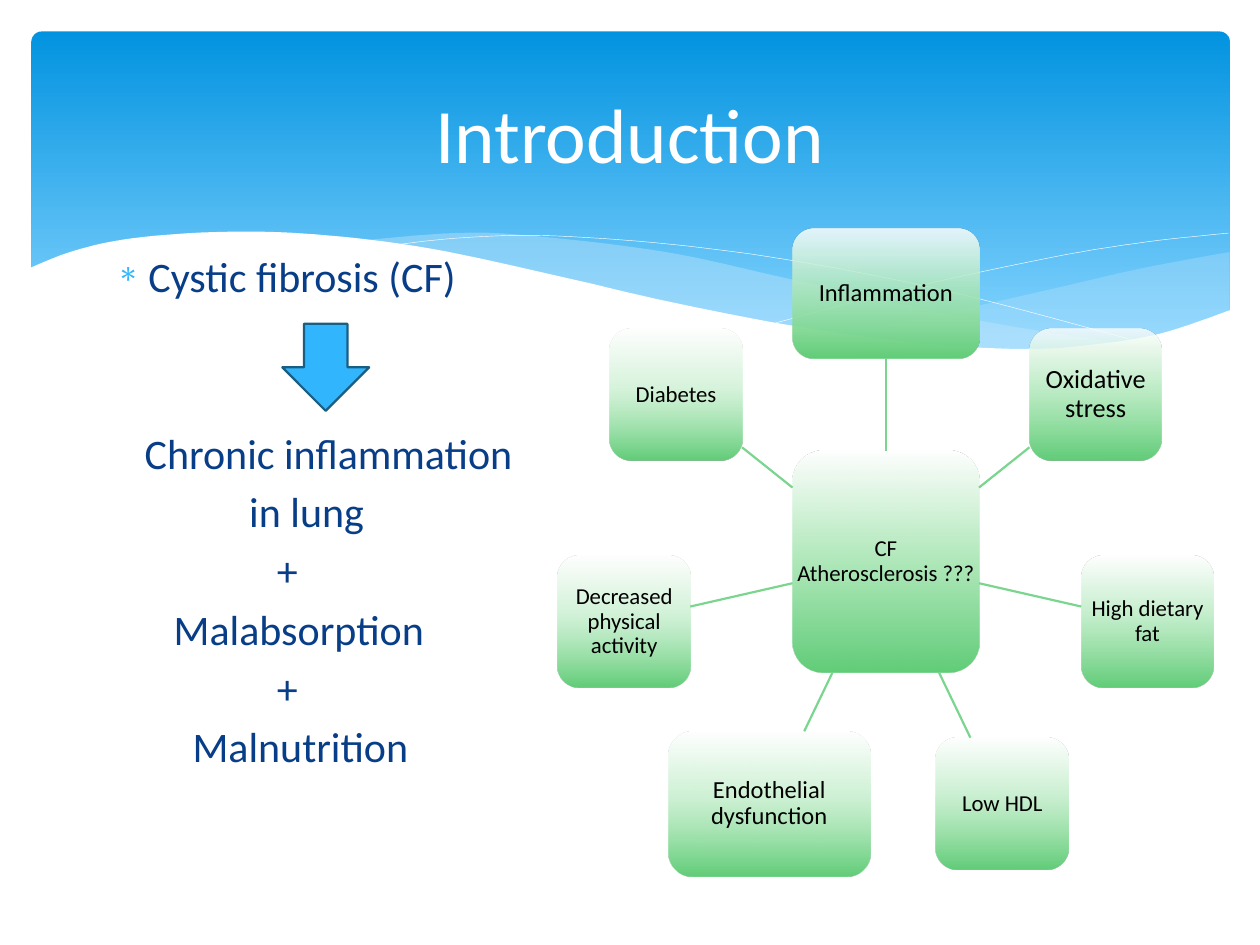
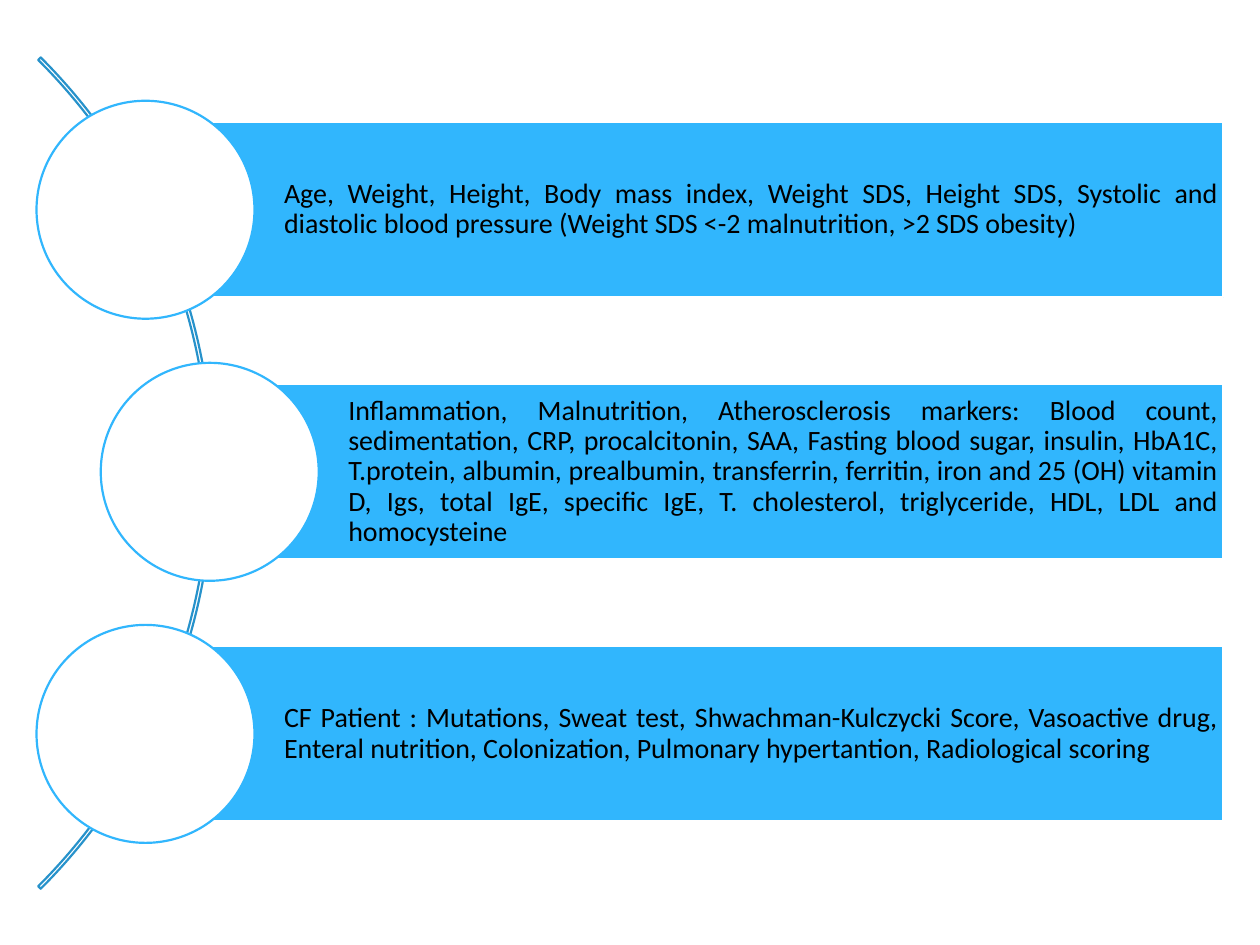
from dataclasses import dataclass
from math import cos, radians, sin

from lxml import etree
from pptx import Presentation
from pptx.dml.color import RGBColor
from pptx.enum.shapes import MSO_CONNECTOR, MSO_SHAPE
from pptx.enum.text import MSO_ANCHOR, PP_ALIGN
from pptx.oxml.ns import qn
from pptx.util import Inches, Pt

ROUNDED, RECTANGLE, OVAL = MSO_SHAPE.ROUNDED_RECTANGLE, MSO_SHAPE.RECTANGLE, MSO_SHAPE.OVAL
DOWN_ARROW, BLOCK_ARC = MSO_SHAPE.DOWN_ARROW, MSO_SHAPE.BLOCK_ARC
STRAIGHT = MSO_CONNECTOR.STRAIGHT
TOP, MIDDLE = MSO_ANCHOR.TOP, MSO_ANCHOR.MIDDLE
LEFT, CENTER, JUSTIFY = PP_ALIGN.LEFT, PP_ALIGN.CENTER, PP_ALIGN.JUSTIFY


@dataclass(frozen=True)
class Theme:
    font: str = "Calibri"
    white: str = "FFFFFF"
    black: str = "000000"
    navy: str = "073E87"
    sky: str = "31B6FD"
    arrow_edge: str = "195F84"
    arc: str = "2792CB"
    mist: str = "C6E7FC"
    band_top: str = "0293E0"
    band_bottom: str = "83D3FE"
    mint: str = "B1E9BB"
    green: str = "61CD78"
    spoke: str = "7AD58E"
    title_size: int = 44
    body_size: int = 24
    bar_size: int = 16
    line_width: float = 1.25
    hairline: float = 0.25
    box_margins: tuple = (0.1, 0.05, 0.1, 0.05)


theme = Theme()


def paint(shape, stops=(), edge=None, width=theme.line_width):
    shape.shadow.inherit = False
    if len(stops) > 1:
        shape.fill.gradient()
        shape.fill.gradient_angle = 270
        stop_list = shape._element.spPr.find(".//" + qn("a:gsLst"))
        stop_list.clear()
        for position, color, opacity in stops:
            stop = etree.SubElement(stop_list, qn("a:gs"), pos=str(position * 1000))
            tint = etree.SubElement(stop, qn("a:srgbClr"), val=color)
            etree.SubElement(tint, qn("a:alpha"), val=str(opacity * 1000))
    elif stops:
        _, color, opacity = stops[0]
        shape.fill.solid()
        shape.fill.fore_color.rgb = RGBColor.from_string(color)
        tint = shape._element.spPr.find(".//" + qn("a:srgbClr"))
        etree.SubElement(tint, qn("a:alpha"), val=str(opacity * 1000))
    else:
        shape.fill.background()
    if edge:
        shape.line.color.rgb = RGBColor.from_string(edge)
        shape.line.width = Pt(width)
    else:
        shape.line.fill.background()


def write(shape, lines, size, color, align, anchor=MIDDLE, spacing=1.0, margins=(0, 0, 0, 0), wrap=True):
    frame = shape.text_frame
    left, top, right, bottom = (Inches(margin) for margin in margins)
    frame_format = {
        "margin_left": left, "margin_top": top, "margin_right": right, "margin_bottom": bottom,
        "word_wrap": wrap, "vertical_anchor": anchor,
    }
    for name, value in frame_format.items():
        setattr(frame, name, value)
    frame.text = "\n".join(lines)
    font_format = {"name": theme.font, "size": Pt(size)}
    for paragraph in frame.paragraphs:
        paragraph.alignment = align
        paragraph.line_spacing = spacing
        for run in paragraph.runs:
            for name, value in font_format.items():
                setattr(run.font, name, value)
            run.font.color.rgb = RGBColor.from_string(color)
    return frame.paragraphs


deck = Presentation()
deck.slide_width, deck.slide_height = Inches(10), Inches(7.5)
blank = deck.slide_layouts[6]

intro = deck.slides.add_slide(blank).shapes

band = intro.add_shape(ROUNDED, Inches(0.25), Inches(0.25), Inches(9.51), Inches(2.7))
band.adjustments[0] = 0.03
paint(band, [(0, theme.band_top, 100), (90, theme.band_bottom, 100)])

right_top = [(9.76, 2), (9.06, 2.13), (8.32, 2.3), (7.29, 2.53), (6.61, 2.65)]
right_bottom = [(6.61, 2.65), (7.32, 2.74), (8.03, 2.78), (8.72, 2.74), (9.35, 2.62), (9.76, 2.47)]
long_top = [(8.93, 2.73), (7.75, 2.54), (6.29, 2.22), (5.28, 2), (4.2, 1.87), (3.61, 1.85), (2.86, 1.91)]
long_bottom = [(2.86, 1.91), (3.83, 2.07), (4.91, 2.32), (6.01, 2.55), (7.09, 2.72), (7.96, 2.78), (8.93, 2.73)]
falling_crest = [(3.09, 1.95), (3.63, 1.89), (4.33, 1.87), (5.33, 1.94), (6.36, 2.08), (7.6, 2.33), (9.07, 2.72)]
rising_crest = [(6.13, 2.57), (7.2, 2.29), (8.36, 2.04), (9.1, 1.92), (9.75, 1.85)]
foot_top = [
    (9.77, 2.46), (9.2, 2.65), (8.63, 2.74), (8.09, 2.77), (7.26, 2.72), (6.26, 2.58), (5.29, 2.39),
    (4.47, 2.2), (3.4, 1.97), (2.5, 1.86), (1.77, 1.84), (1.06, 1.89), (0.59, 1.99), (0.23, 2.13),
]
foot_bottom = [(0.23, 3.29), (9.77, 3.29)]
waves = [
    ([right_top, right_bottom], [(0, theme.mist, 29)], None),
    ([long_top, long_bottom], [(0, theme.mist, 40)], None),
    ([falling_crest], [], theme.white),
    ([rising_crest], [], theme.white),
    ([foot_top, foot_bottom], [(0, theme.white, 100)], None),
]
units_per_inch, curve_steps = 1000, 8
for curves, stops, edge in waves:
    points = []
    for knots in curves:
        padded = [knots[0], *knots, knots[-1]]
        for before, start, end, after in zip(padded, padded[1:], padded[2:], padded[3:]):
            for step in range(curve_steps):
                t = step / curve_steps
                points.append([
                    units_per_inch * (b + t * (c - a) / 2 + t**2 * (2 * a - 5 * b + 4 * c - d) / 2
                                      + t**3 * (3 * b - a - 3 * c + d) / 2)
                    for a, b, c, d in zip(before, start, end, after)
                ])
        points.append([units_per_inch * value for value in knots[-1]])
    outline = intro.build_freeform(*points[0], scale=Inches(1) / units_per_inch)
    outline.add_line_segments(points[1:], close=bool(stops))
    paint(outline.convert_to_shape(), stops, edge, theme.hairline)

causes = [
    ("Cystic fibrosis (CF)", 0.33),
    ("Chronic inflammation", 0.3),
    ("in lung", 1.13),
    ("+", 1.35),
    ("Malabsorption", 0.53),
    ("+", 1.35),
    ("Malnutrition", 0.68),
]
body = intro.add_textbox(Inches(0.75), Inches(1.94), Inches(3.54), Inches(4.76))
cause_lines = write(body, [cause for cause, _ in causes], theme.body_size, theme.navy, LEFT,
                    anchor=TOP, margins=theme.box_margins)
for line, (_, indent) in zip(cause_lines, causes):
    line.space_before = Pt(4.8)
    line._p.get_or_add_pPr().set("marL", str(Inches(indent)))
disease_line, inflammation_line = cause_lines[:2]
inflammation_line.space_before = Pt(72)
bullet_format = disease_line._p.get_or_add_pPr()
bullet_format.set("indent", str(Inches(-0.25)))
bullet_color = etree.SubElement(bullet_format, qn("a:buClr"))
etree.SubElement(bullet_color, qn("a:srgbClr"), val=theme.sky)
etree.SubElement(bullet_format, qn("a:buSzPct"), val="75000")
etree.SubElement(bullet_format, qn("a:buChar"), char="∗")

title = intro.add_textbox(Inches(0.5), Inches(0.37), Inches(9), Inches(1.37))
write(title, ["Introduction"], theme.title_size, theme.white, CENTER, margins=theme.box_margins)

hub_x, hub_y, hub_width, hub_height = 7.03, 4.46, 1.48, 1.76
ring_radius = 2.13
outcome = ("CF\vAtherosclerosis ???", hub_width, hub_height, 13)
risk_factors = [
    ("Inflammation", 1.48, 1.03, 14),
    ("Oxidative stress", 1.05, 1.05, 15),
    ("High dietary fat", 1.05, 1.05, 13),
    ("Low HDL", 1.05, 1.05, 13),
    ("Endothelial dysfunction", 1.6, 1.15, 14),
    ("Decreased physical activity", 1.05, 1.05, 13),
    ("Diabetes", 1.05, 1.05, 13),
]
directions = [(0, 0)]
for position in range(len(risk_factors)):
    angle = radians(position * 360 / len(risk_factors))
    directions.append((sin(angle), -cos(angle)))

nodes = []
for index, (label, width, height, size) in enumerate([outcome, *risk_factors]):
    across, down = directions[index]
    left = hub_x + ring_radius * across - width / 2
    top = hub_y + ring_radius * down - height / 2
    node = intro.add_shape(ROUNDED, Inches(left), Inches(top), Inches(width), Inches(height))
    opacity = round(90 - index * 40 / len(risk_factors))
    paint(node, [(0, theme.white, opacity), (44, theme.mint, opacity), (100, theme.green, 100)])
    write(node, [label], size, theme.black, CENTER, spacing=0.9, wrap="\v" not in label)
    nodes.append(node)

hub, *satellites = nodes
for satellite, (_, width, height, _), (across, down) in zip(satellites, risk_factors, directions[1:]):
    slope_x, slope_y = max(abs(across), 0.01), abs(down)
    inner = min(hub_width / 2 / slope_x, hub_height / 2 / slope_y)
    outer = ring_radius - min(width / 2 / slope_x, height / 2 / slope_y)
    ends = [Inches(origin + reach * direction) for reach in (inner, outer)
            for origin, direction in ((hub_x, across), (hub_y, down))]
    spoke = intro.add_connector(STRAIGHT, *ends)
    spoke.line.color.rgb = RGBColor.from_string(theme.spoke)
    spoke.line.width = Pt(theme.line_width)
    etree.SubElement(spoke._element.spPr, qn("a:effectLst"))
    if across == 0:
        spoke.begin_connect(hub, 0)
        spoke.end_connect(satellite, 2)

leads_to = intro.add_shape(DOWN_ARROW, Inches(2.24), Inches(2.57), Inches(0.69), Inches(0.69))
paint(leads_to, [(0, theme.sky, 100)], theme.arrow_edge)

data = deck.slides.add_slide(blank).shapes

arc = data.add_shape(BLOCK_ARC, Inches(-7.64), Inches(-0.91), Inches(9.33), Inches(9.33))
for index, value in enumerate((189, 27, 0.003)):
    arc.adjustments[index] = value
paint(arc, [], theme.arc)

measurements = [
    (0.29, "Age, Weight, Height, Body mass index, Weight SDS, Height SDS, Systolic and diastolic "
           "blood pressure (Weight SDS <-2 malnutrition, >2 SDS obesity)"),
    (0.8, "Inflammation, Malnutrition, Atherosclerosis markers: Blood count, sedimentation, CRP, "
          "procalcitonin, SAA, Fasting blood sugar, insulin, HbA1C, T.protein, albumin, prealbumin, "
          "transferrin, ferritin, iron and 25 (OH) vitamin D, Igs, total IgE, specific IgE, "
          "T. cholesterol, triglyceride, HDL, LDL and homocysteine"),
    (0.29, "CF Patient : Mutations, Sweat test, Shwachman-Kulczycki Score, Vasoactive drug, "
           "Enteral nutrition, Colonization, Pulmonary hypertantion, Radiological scoring"),
]
first_top, row_step, diameter, bar_right, bar_height = 0.8, 2.08, 1.73, 9.71, 1.39
for row, (circle_left, measured) in enumerate(measurements):
    circle_top = first_top + row * row_step
    bar_left = circle_left + diameter / 2
    bar_top = circle_top + (diameter - bar_height) / 2
    bar = data.add_shape(RECTANGLE, Inches(bar_left), Inches(bar_top),
                         Inches(bar_right - bar_left), Inches(bar_height))
    paint(bar, [(0, theme.sky, 100)], theme.white)
    write(bar, [measured], theme.bar_size, theme.black, JUSTIFY, spacing=0.9,
          margins=(1.1, 0.04, 0.04, 0.04))
    circle = data.add_shape(OVAL, Inches(circle_left), Inches(circle_top), Inches(diameter), Inches(diameter))
    paint(circle, [(0, theme.white, 100)], theme.sky)

deck.save("out.pptx")
